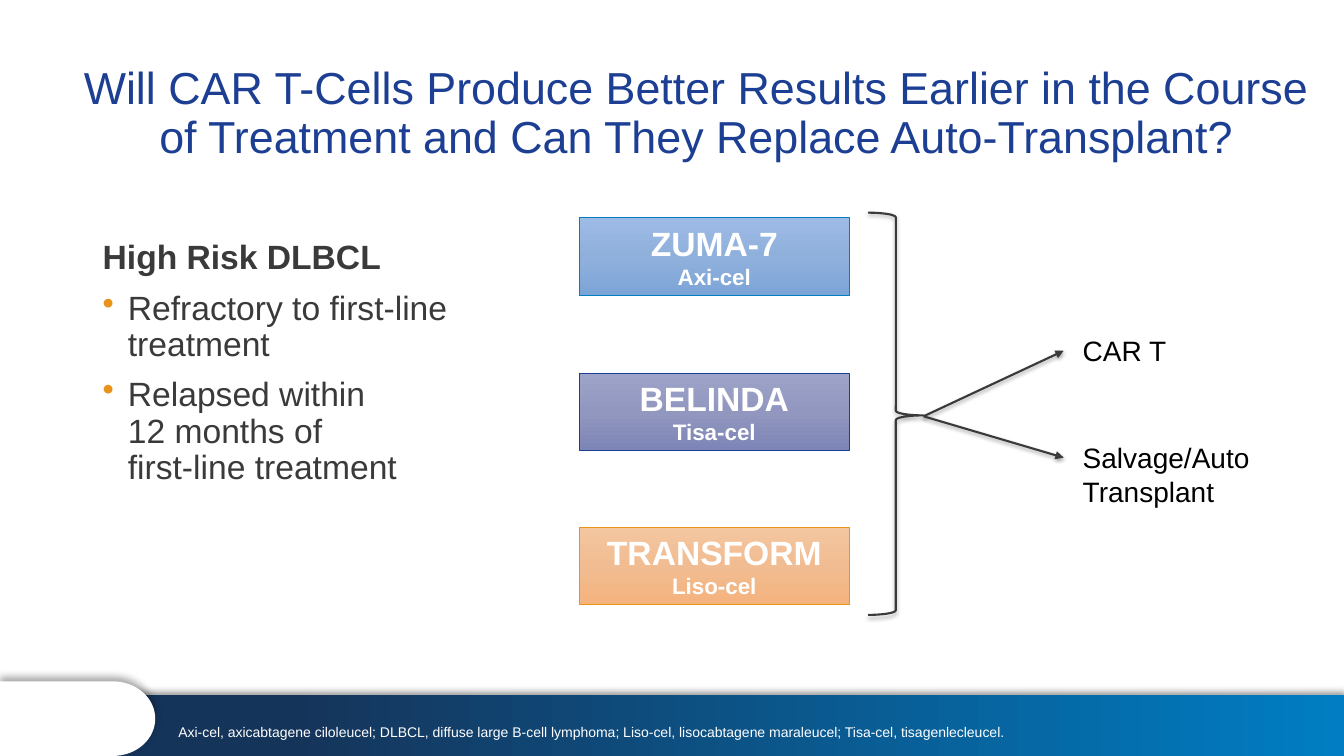
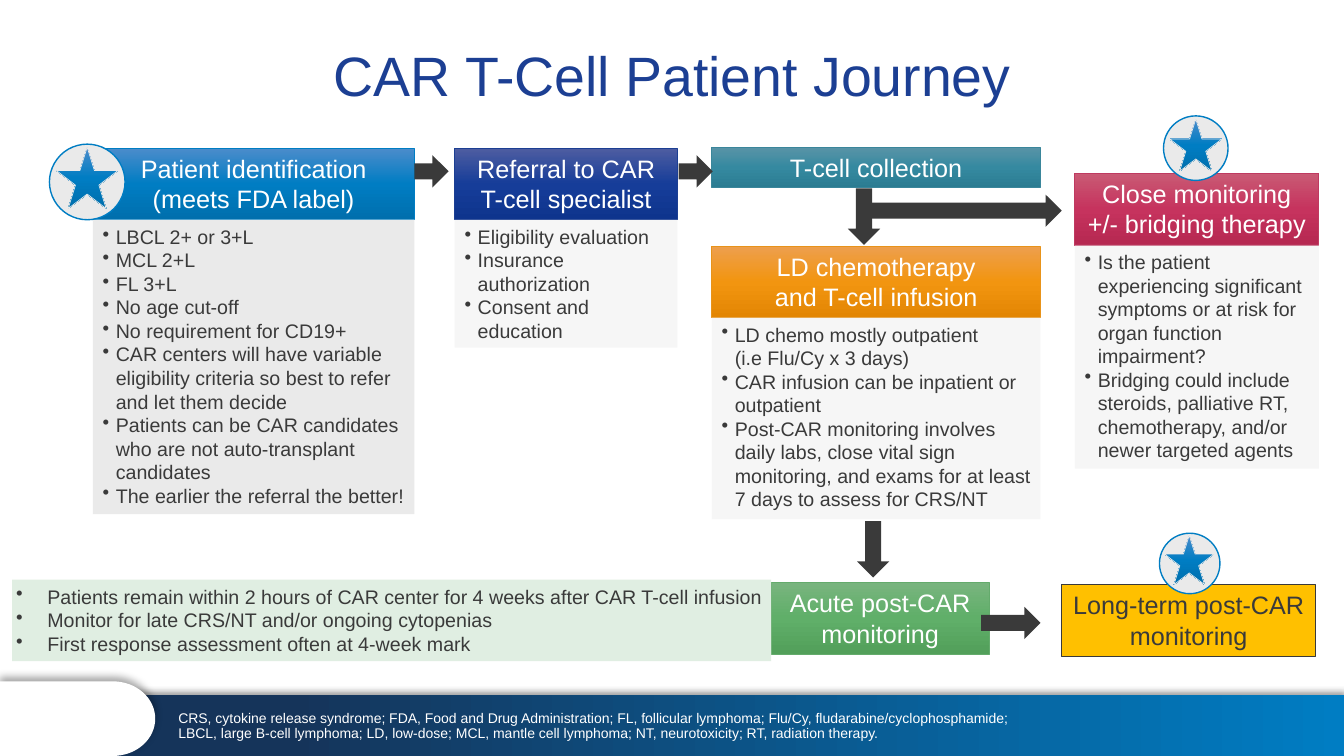
import math
from copy import deepcopy

from lxml import etree
from pptx import Presentation
from pptx import util as u
from pptx.dml.color import RGBColor
from pptx.enum import shapes, text
from pptx.oxml.ns import qn

PX = 9144
WIDTH, HEIGHT = 1333, 750
FONT = "Arial"
SHAPE = shapes.MSO_SHAPE
CENTER = text.PP_ALIGN.CENTER
LEFT = text.PP_ALIGN.LEFT

COLORS = {
    "title": "1C3F93", "ink": "3A3A3A", "white": "FFFFFF", "black": "000000",
    "blue": "007DC3", "night": "15345A", "orange": "E8931A", "teal": "3A869B",
    "red": "BF3A61", "green": "64AB6C", "gold": "FFC000",
    "grey": "EAEAEA", "mint": "E0EEE2",
    "sky_top": "9DBBE5", "sky_mid": "90B0DC", "sky_low": "7CA5D7",
    "violet_top": "9EA4C9", "violet_mid": "9197BE", "violet_low": "7D85B7",
    "peach_top": "F4C6A0", "peach_mid": "F1BC92", "peach_low": "F5B37D",
    "blue_top": "4B8CCB", "blue_mid": "007DC3", "blue_low": "006FAD",
    "title_top": "4E5DA1", "title_mid": "163D99", "title_low": "0E348D",
    "teal_top": "5A94A7", "teal_mid": "3589A0", "teal_low": "2B7C92",
    "orange_top": "ED9F4E", "orange_mid": "F29510", "orange_low": "E38603",
    "green_top": "78B47E", "green_mid": "60AF69", "green_low": "529F5A",
    "red_top": "C95A74", "red_mid": "C6335E", "red_low": "B62851",
}


def px(*lengths):
    return [round(length * PX) for length in lengths]


def rgb(name):
    return RGBColor.from_string(COLORS[name])


def ramp(name):
    return [(0, f"{name}_top"), (50, f"{name}_mid"), (100, f"{name}_low")]


def add_sub(parent, tag, **attributes):
    return etree.SubElement(parent, qn(tag), {k: str(v) for k, v in attributes.items()})


def paint(shape, fill=None, line=None, weight=0.5, angle=270, opacity=100):
    shape.shadow.inherit = False
    if fill is None:
        shape.fill.background()
    elif isinstance(fill, str):
        shape.fill.solid()
        shape.fill.fore_color.rgb = rgb(fill)
        if opacity < 100:
            solid = shape._element.spPr.find(qn("a:solidFill"))
            add_sub(solid[0], "a:alpha", val=opacity * 1000)
    else:
        shape.fill.gradient()
        shape.fill.gradient_angle = angle
        stops = shape._element.spPr.find(".//" + qn("a:gsLst"))
        for stop in list(stops):
            stops.remove(stop)
        for position, name in fill:
            stop = add_sub(stops, "a:gs", pos=position * 1000)
            add_sub(stop, "a:srgbClr", val=COLORS[name])
    if line:
        shape.line.color.rgb = rgb(line)
        shape.line.width = u.Pt(weight)
    else:
        shape.line.fill.background()


def cast_shadow(shape, opacity, blur, distance, angle):
    properties = shape._element.spPr
    effects = properties.find(qn("a:effectLst"))
    if effects is None:
        effects = add_sub(properties, "a:effectLst")
    shadow = add_sub(effects, "a:outerShdw", blurRad=u.Pt(blur), dist=u.Pt(distance),
                     dir=angle * 60000, rotWithShape=0)
    add_sub(add_sub(shadow, "a:srgbClr", val=COLORS["black"]), "a:alpha", val=opacity * 1000)


def draw(slide, kind, box, fill=None, **style):
    shape = slide.shapes.add_shape(kind, *px(*box))
    paint(shape, fill, **style)
    return shape


def format_paragraph(paragraph, size=18, color="ink", bold=False, align=LEFT, indent=0,
                     bullet_color=None, spacing=None, before=0):
    paragraph.alignment = align
    if indent:
        properties = paragraph._p.get_or_add_pPr()
        properties.set("marL", str(indent * PX))
        properties.set("indent", str(-indent * PX))
        if bullet_color:
            add_sub(add_sub(properties, "a:buClr"), "a:srgbClr", val=COLORS[bullet_color])
        add_sub(properties, "a:buChar", char="•")
    if spacing:
        paragraph.line_spacing = spacing
    if before:
        paragraph.space_before = u.Pt(before)
    for run in paragraph.runs:
        run.font.name = FONT
        run.font.size = u.Pt(size)
        run.font.bold = bold
        run.font.color.rgb = rgb(color)
    for line_break in paragraph._p.findall(qn("a:br")):
        line_break.append(deepcopy(paragraph.runs[0]._r.rPr))


def write(shape, lines, anchor=text.MSO_ANCHOR.TOP, insets=(10, 5, 10, 5), **style):
    frame = shape.text_frame
    frame.word_wrap = True
    frame.vertical_anchor = anchor
    frame.margin_left, frame.margin_top, frame.margin_right, frame.margin_bottom = px(*insets)
    for i, line in enumerate(lines):
        words, changes = (line, {}) if isinstance(line, str) else line
        paragraph = frame.add_paragraph() if i else frame.paragraphs[0]
        paragraph.text = words
        options = {**style, **changes}
        if not i:
            options["before"] = 0
        format_paragraph(paragraph, **options)


def label(slide, box, lines, **style):
    write(slide.shapes.add_textbox(*px(*box)), lines, **style)


def add_frame(slide, title, title_box, title_size, footnote, footnote_box):
    band = draw(slide, SHAPE.RECTANGLE, (116, 690, WIDTH - 116, 60),
                [(0, "blue"), (86, "night")], angle=180)
    cast_shadow(band, 40, 4, 3, 270)
    left, top, straight, radius_x, radius_y = 0, 676, 112, 42, 37
    curve = [px(straight + radius_x * math.sin(math.pi * i / 32),
                top + radius_y * (1 - math.cos(math.pi * i / 32))) for i in range(33)]
    outline = slide.shapes.build_freeform(*px(left, top))
    outline.add_line_segments(curve + [px(left, HEIGHT)])
    tab = outline.convert_to_shape()
    paint(tab, "white")
    cast_shadow(tab, 34, 6.1, 3, 270)
    label(slide, title_box, [title], size=title_size, color="title", align=CENTER,
          spacing=0.9, anchor=text.MSO_ANCHOR.MIDDLE)
    label(slide, footnote_box, [footnote], size=10, color="white", spacing=0.9,
          anchor=text.MSO_ANCHOR.BOTTOM)


def add_trials(slide, left, top, trials):
    for i, (trial, product, shades, edge) in enumerate(trials):
        box = (left, top + round(i * 153.5), 267, 77)
        write(draw(slide, SHAPE.RECTANGLE, box, ramp(shades), line=edge),
              [trial, (product, {"size": 16})], size=24, color="white", bold=True, align=CENTER)


def add_arms(slide, left, top, arms):
    brace = draw(slide, SHAPE.RIGHT_BRACE, (left, top, 55, 399), line="ink", weight=1.5)
    brace.adjustments[0], brace.adjustments[1] = 0.083, 0.504
    cast_shadow(brace, 35, 3.1, 1.8, 90)
    for arm, offset, width, height in arms:
        ends = px(left + 55, top + 202, left + 194, top + offset)
        arrow = slide.shapes.add_connector(shapes.MSO_CONNECTOR.STRAIGHT, *ends)
        arrow.line.color.rgb = rgb("ink")
        arrow.line.width = u.Pt(1.5)
        add_sub(arrow.line._get_or_add_ln(), "a:tailEnd", type="triangle")
        cast_shadow(arrow, 38, 3.1, 1.6, 90)
        label(slide, (left + 203, top + offset - 22, width, height), [arm],
              size=20, color="black")


def add_step(slide, box, heading, fill, edge, color="white"):
    write(draw(slide, SHAPE.RECTANGLE, box, fill, line=edge), heading,
          color=color, align=CENTER)


def add_notes(slide, box, notes, fill="grey", opacity=40, indent=13, inset=10):
    write(draw(slide, SHAPE.RECTANGLE, box, fill, opacity=opacity), notes,
          size=14, indent=indent, insets=(inset, 5, 4, 5))


def add_stage(slide, left, top, width, heading, shades, notes, notes_height, opacity=40):
    add_step(slide, (left, top, width, 71), heading, ramp(shades), shades)
    add_notes(slide, (left, top + 71, width, notes_height), notes, opacity=opacity)


def add_star(slide, left, top, size):
    draw(slide, SHAPE.OVAL, (left, top, size, size), "grey", line="blue", weight=1)
    margin, star = round(size * 0.09), round(size * 0.82)
    draw(slide, SHAPE.STAR_5_POINT, (left + margin, top + round(size * 0.04), star, star),
         ramp("blue"), line="grey")


def build_trials_slide(slide):
    add_frame(slide,
              "Will CAR T-Cells Produce Better Results Earlier in the Course of Treatment "
              "and Can They Replace Auto-Transplant?", (70, 41, 1242, 145), 32,
              "Axi-cel, axicabtagene ciloleucel; DLBCL, diffuse large B-cell lymphoma; "
              "Liso-cel, lisocabtagene maraleucel; Tisa-cel, tisagenlecleucel.",
              (167, 691, 940, 49))
    bullet = {"indent": 25, "bullet_color": "orange"}
    label(slide, (92, 234, 428, 399),
          [("High Risk DLBCL", {"bold": True}),
           ("Refractory to first-line treatment", bullet),
           ("Relapsed within\n12 months of\nfirst-line treatment", bullet)],
          size=24, spacing=0.9, before=10)
    add_trials(slide, 575, 216, [
        ("ZUMA-7", "Axi-cel", "sky", "blue"),
        ("BELINDA", "Tisa-cel", "violet", "title"),
        ("TRANSFORM", "Liso-cel", "peach", "orange"),
    ])
    add_arms(slide, 861, 211, [
        ("CAR T", 137, 126, 44),
        ("Salvage/Auto Transplant", 243, 234, 77),
    ])


def build_journey_slide(slide):
    add_frame(slide, "CAR T-Cell Patient Journey", (92, 40, 1150, 76), 39.6,
              "CRS, cytokine release syndrome; FDA, Food and Drug Administration; "
              "FL, follicular lymphoma; Flu/Cy, fludarabine/cyclophosphamide; "
              "LBCL, large B-cell lymphoma; LD, low-dose; MCL, mantle cell lymphoma; "
              "NT, neurotoxicity; RT, radiation therapy.", (167, 701, 850, 40))
    add_stage(slide, 92, 147, 319, ["Patient identification", "(meets FDA label)"], "blue", [
        "LBCL 2+ or 3+L", "MCL 2+L", "FL 3+L", "No age cut-off", "No requirement for CD19+",
        "CAR centers will have variable eligibility criteria so best to refer "
        "and let them decide",
        "Patients can be CAR candidates who are not auto-transplant candidates",
        "The earlier the referral the better!",
    ], 292, opacity=100)
    add_stage(slide, 451, 147, 221, ["Referral to CAR T-cell specialist"], "title", [
        "Eligibility evaluation", "Insurance authorization", "Consent and education",
    ], 127)
    add_stage(slide, 706, 244, 326, ["LD chemotherapy", "and T-cell infusion"], "orange", [
        "LD chemo mostly outpatient\n(i.e Flu/Cy x 3 days)",
        "CAR infusion can be inpatient or outpatient",
        "Post-CAR monitoring involves daily labs, close vital sign monitoring, "
        "and exams for at least 7 days to assess for CRS/NT",
    ], 200)
    add_stage(slide, 1066, 172, 242, ["Close monitoring", "+/- bridging therapy"], "red", [
        "Is the patient experiencing significant symptoms or at risk for organ function "
        "impairment?",
        "Bridging could include steroids, palliative RT, chemotherapy, and/or newer "
        "targeted agents",
    ], 222)
    add_step(slide, (706, 146, 326, 40), ["T-cell collection"], ramp("teal"), "teal")
    add_step(slide, (765, 578, 216, 71), ["Acute post-CAR monitoring"], ramp("green"), "green")
    add_step(slide, (1053, 580, 252, 71), ["Long-term post-CAR", "monitoring"],
             "gold", "ink", color="ink")
    add_notes(slide, (12, 575, 753, 81), [
        "Patients remain within 2 hours of CAR center for 4 weeks after CAR T-cell infusion",
        "Monitor for late CRS/NT and/or ongoing cytopenias",
        "First response assessment often at 4-week mark",
    ], fill="mint", opacity=100, indent=31, inset=4)
    for star in [(49, 143, 75), (1154, 115, 64), (1150, 529, 60)]:
        add_star(slide, *star)
    for left, top, length in [(411, 154, 34), (673, 154, 34), (862, 193, 191), (973, 602, 59)]:
        draw(slide, SHAPE.RIGHT_ARROW, (left, top, length, 32), "ink")
    for left, top in [(841, 187), (850, 517)]:
        draw(slide, SHAPE.DOWN_ARROW, (left, top, 32, 56), "ink")


def main():
    deck = Presentation()
    deck.slide_width, deck.slide_height = px(WIDTH, HEIGHT)
    for build in (build_trials_slide, build_journey_slide):
        build(deck.slides.add_slide(deck.slide_layouts[6]))
    deck.save("out.pptx")


if __name__ == "__main__":
    main()
